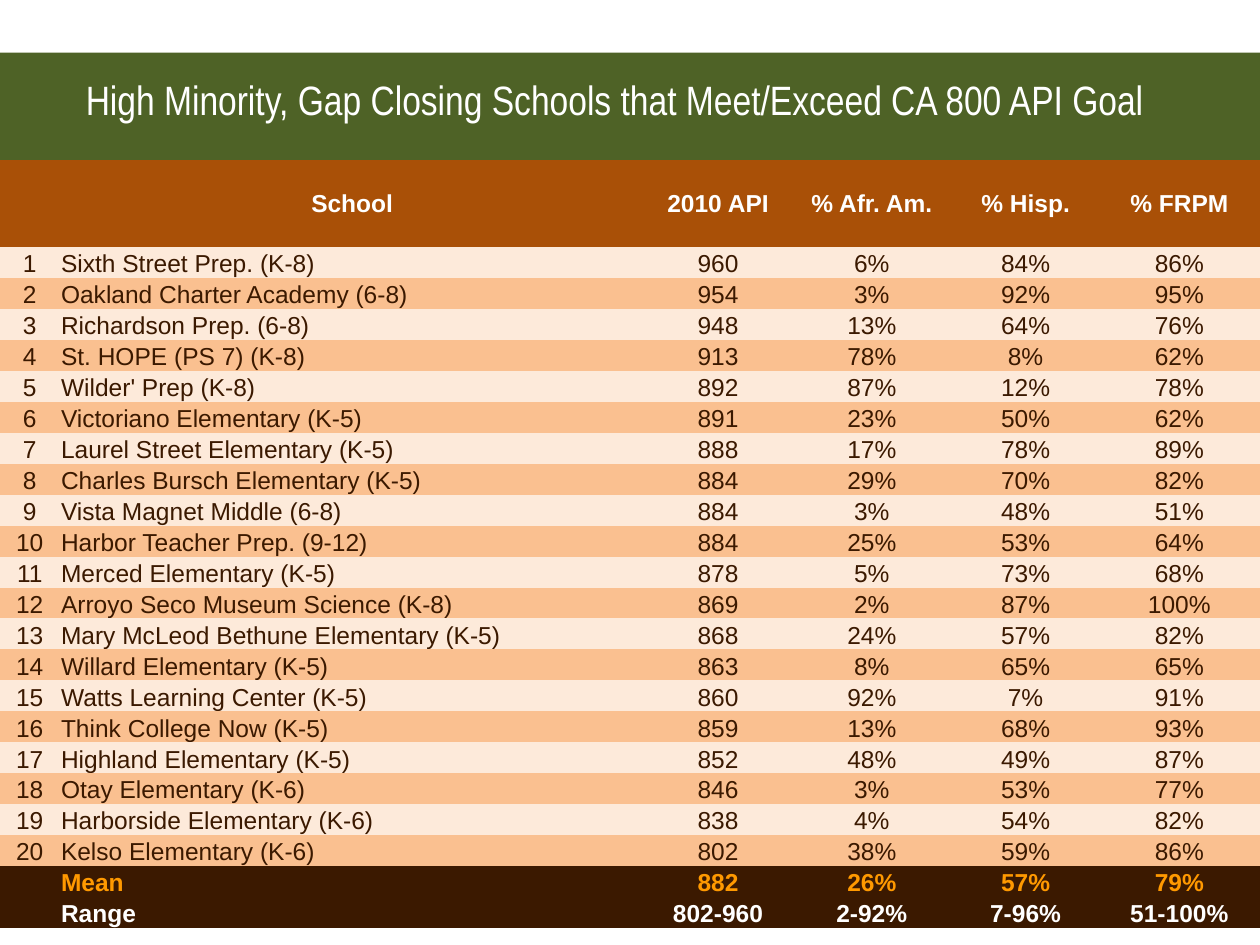
"""Build a slide with a table of high-minority schools that meet the state API goal."""
from typing import NamedTuple

from lxml.etree import SubElement
from pptx import Presentation
from pptx.dml.color import RGBColor
from pptx.enum.shapes import MSO_SHAPE as Shape
from pptx.enum.text import MSO_ANCHOR as Anchor, PP_ALIGN as Align
from pptx.oxml.ns import qn
from pptx.util import Cm, Pt

GREEN, RUST, BROWN = "4E6226", "A95007", "3B1900"
CREAM, PEACH, ORANGE, WHITE = "FDEADA", "FAC090", "FF9900", "FFFFFF"
NO_STYLE = "{2D5ABB26-0587-4C30-8999-92F81FD0307C}"
COLUMN_WIDTHS = [Cm(1.2), Cm(11.8), Cm(2.95), Cm(3.25), Cm(2.95), Cm(3.25)]
HEADER_HEIGHT, SCHOOL_HEIGHT, SUMMARY_HEIGHT = Cm(1.75), Cm(12.08) // 20, Cm(0.62)
TABLE_TOP = Cm(3.23)


class School(NamedTuple):
    name: str
    api: int
    african_american: int
    hispanic: int
    frpm: int


class Line(NamedTuple):
    texts: list[str]
    fill: str
    color: str
    bold: bool
    height: int


SCHOOLS = [
    School("Sixth Street Prep. (K-8)", 960, 6, 84, 86),
    School("Oakland Charter Academy (6-8)", 954, 3, 92, 95),
    School("Richardson Prep. (6-8)", 948, 13, 64, 76),
    School("St. HOPE (PS 7) (K-8)", 913, 78, 8, 62),
    School("Wilder' Prep (K-8)", 892, 87, 12, 78),
    School("Victoriano Elementary (K-5)", 891, 23, 50, 62),
    School("Laurel Street Elementary (K-5)", 888, 17, 78, 89),
    School("Charles Bursch Elementary (K-5)", 884, 29, 70, 82),
    School("Vista Magnet Middle (6-8)", 884, 3, 48, 51),
    School("Harbor Teacher Prep. (9-12)", 884, 25, 53, 64),
    School("Merced Elementary (K-5)", 878, 5, 73, 68),
    School("Arroyo Seco Museum Science (K-8)", 869, 2, 87, 100),
    School("Mary McLeod Bethune Elementary (K-5)", 868, 24, 57, 82),
    School("Willard Elementary (K-5)", 863, 8, 65, 65),
    School("Watts Learning Center (K-5)", 860, 92, 7, 91),
    School("Think College Now (K-5)", 859, 13, 68, 93),
    School("Highland Elementary (K-5)", 852, 48, 49, 87),
    School("Otay Elementary (K-6)", 846, 3, 53, 77),
    School("Harborside Elementary (K-6)", 838, 4, 54, 82),
    School("Kelso Elementary (K-6)", 802, 38, 59, 86),
]


def rgb(value: str) -> RGBColor:
    return RGBColor.from_string(value)


def style_runs(paragraph, font: str, size: float, color: str, bold: bool = False) -> None:
    for run in paragraph.runs:
        run.font.name, run.font.size, run.font.bold = font, Pt(size), bold
        run.font.color.rgb = rgb(color)


def school_line(rank: int, school: School) -> Line:
    shares = [f"{share}%" for share in school[2:]]
    fill = CREAM if rank % 2 else PEACH
    return Line([str(rank), school.name, str(school.api), *shares], fill, BROWN, False, SCHOOL_HEIGHT)


def draw_banner(slide, title: str) -> None:
    banner = slide.shapes.add_shape(Shape.RECTANGLE, 0, Cm(1.06), Cm(25.4), Cm(2.75))
    banner.shadow.inherit = False
    banner.fill.solid()
    banner.fill.fore_color.rgb = rgb(GREEN)
    banner.line.fill.background()
    heading = slide.shapes.add_textbox(Cm(1.48), Cm(1.48), Cm(22.86), Cm(1.04)).text_frame
    heading.word_wrap = True
    heading.vertical_anchor = Anchor.MIDDLE
    heading.text = title
    style_runs(heading.paragraphs[0], "Arial Narrow", 23.4, WHITE)


def fill_cell(cell, text: str, line: Line, align: Align, anchor: Anchor) -> None:
    cell.fill.solid()
    cell.fill.fore_color.rgb = rgb(line.fill)
    cell.margin_left = cell.margin_right = cell.margin_top = Cm(0.03)
    cell.margin_bottom = 0
    cell.vertical_anchor = anchor
    paragraph = cell.text_frame.paragraphs[0]
    paragraph.text = text
    paragraph.alignment = align
    style_runs(paragraph, "Arial", 14, line.color, line.bold)
    if not text:
        SubElement(paragraph._p, qn("a:endParaRPr"), sz="1400")


def draw_table(slide, lines: list[Line]) -> None:
    frame = slide.shapes.add_table(len(lines), len(COLUMN_WIDTHS), 0, TABLE_TOP,
                                   sum(COLUMN_WIDTHS), sum(line.height for line in lines))
    table = frame.table
    table.first_row = table.horz_banding = False
    table._tbl.tblPr.find(qn("a:tableStyleId")).text = NO_STYLE
    for column, width in zip(table.columns, COLUMN_WIDTHS):
        column.width = width
    for index, (row, line) in enumerate(zip(table.rows, lines)):
        row.height = line.height
        anchor = Anchor.BOTTOM if index else Anchor.MIDDLE
        for position, (cell, text) in enumerate(zip(row.cells, line.texts)):
            align = Align.LEFT if index and position == 1 else Align.CENTER
            fill_cell(cell, text, line, align, anchor)


def main() -> None:
    deck = Presentation()
    deck.slide_width, deck.slide_height = Cm(25.4), Cm(19.05)
    slide = deck.slides.add_slide(deck.slide_layouts[6])
    draw_banner(slide, "High Minority, Gap Closing Schools that Meet/Exceed CA 800 API Goal")
    header = ["", "School", "2010 API", "% Afr. Am.", "% Hisp.", "% FRPM"]
    mean = ["", "Mean", "882", "26%", "57%", "79%"]
    spread = ["", "Range", "802-960", "2-92%", "7-96%", "51-100%"]
    draw_table(slide, [
        Line(header, RUST, WHITE, True, HEADER_HEIGHT),
        *(school_line(rank, school) for rank, school in enumerate(SCHOOLS, 1)),
        Line(mean, BROWN, ORANGE, True, SUMMARY_HEIGHT),
        Line(spread, BROWN, WHITE, True, SUMMARY_HEIGHT),
    ])
    deck.save("out.pptx")


if __name__ == "__main__":
    main()
